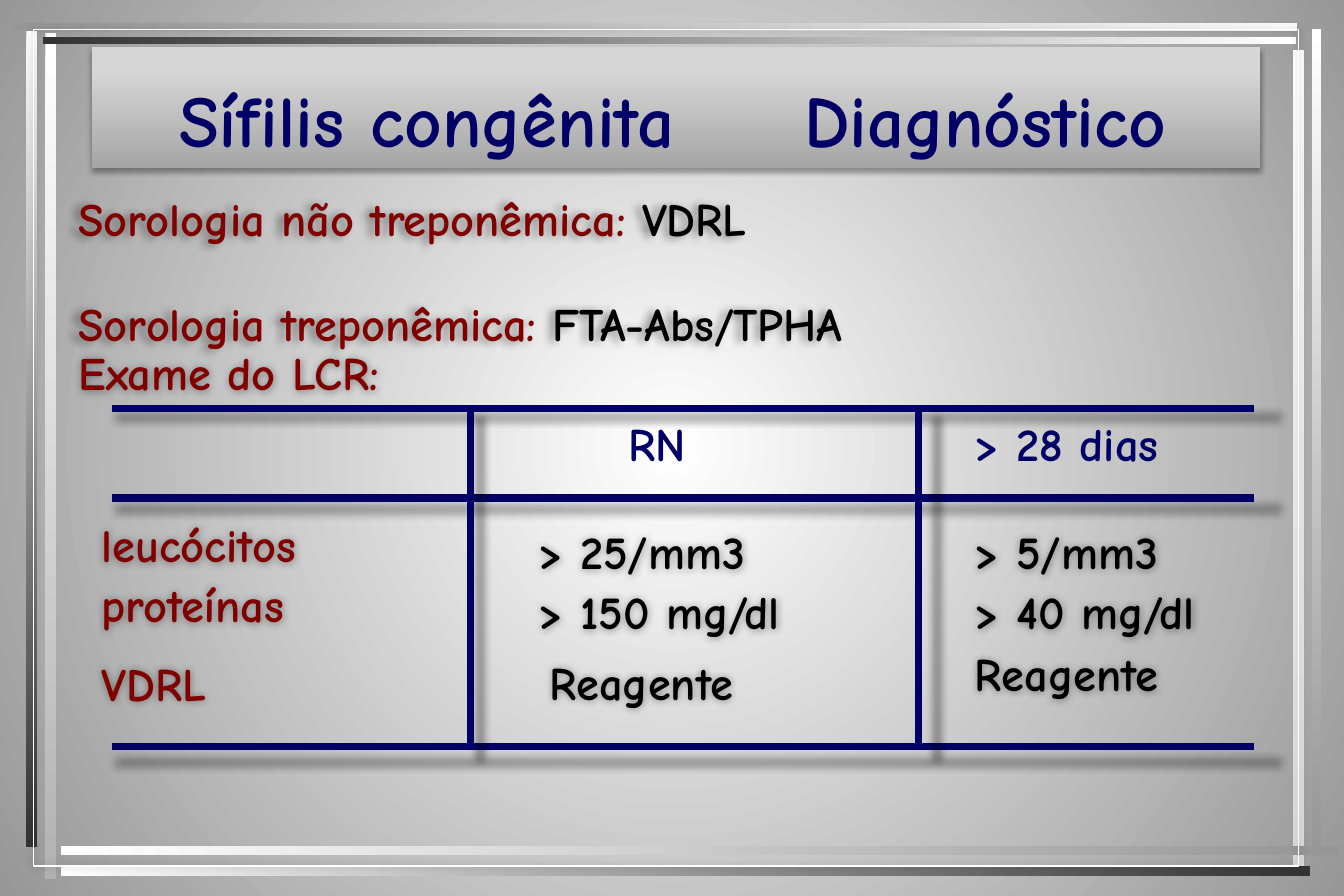
from dataclasses import dataclass
from typing import Optional

from lxml.etree import SubElement
from pptx import Presentation
from pptx.dml.color import RGBColor
from pptx.enum.shapes import MSO_CONNECTOR as Connector, MSO_SHAPE as Preset
from pptx.enum.text import MSO_ANCHOR as Anchor, MSO_AUTO_SIZE as AutoSize, PP_ALIGN as Align
from pptx.oxml.ns import qn
from pptx.util import Pt

PX = 9144  # EMU in one px, 100 px to the inch
FONT = "Comic Neue"
WHITE = RGBColor(0xFF, 0xFF, 0xFF)
PALE = RGBColor(0xDD, 0xDD, 0xDD)
SILVER = RGBColor(0xB2, 0xB2, 0xB2)
GREY = RGBColor(0x96, 0x96, 0x96)
EDGE = RGBColor(0x97, 0x97, 0x97)
CHARCOAL = RGBColor(0x33, 0x33, 0x33)
TITLE_DARK = RGBColor(0xA5, 0xA5, 0xA5)
TITLE_LIGHT = RGBColor(0xD6, 0xD6, 0xD6)
TITLE_TOP = RGBColor(0xD7, 0xD7, 0xD7)
NAVY = RGBColor(0x00, 0x00, 0x66)
MAROON = RGBColor(0x80, 0x00, 0x00)
BLACK = RGBColor(0x00, 0x00, 0x00)


@dataclass
class Shadow:
    blur: float
    distance: float = 0
    direction: int = 0
    alpha: int = 40
    scale: int = 100


@dataclass
class Bar:
    left: int
    top: int
    width: int
    height: int
    start: RGBColor
    end: RGBColor


@dataclass
class Label:
    left: int
    top: int
    width: int
    runs: list[tuple[str, RGBColor]]
    shadow: Optional[Shadow] = None


@dataclass
class Rule:
    x1: int
    y1: int
    x2: int
    y2: int


SOFT = Shadow(blur=5)
LEFTWARD = Shadow(blur=5, distance=4, direction=180)
RULE_SHADOW = Shadow(blur=5, scale=102)
TITLE_SHADOW = Shadow(blur=3.1, distance=1.8, direction=90, alpha=35)

BARS = [
    Bar(38, 28, 9, 708, WHITE, SILVER),
    Bar(22, 25, 9, 684, WHITE, CHARCOAL),
    Bar(1098, 24, 8, 693, WHITE, GREY),
    Bar(1082, 42, 10, 683, WHITE, PALE),
    Bar(51, 708, 1069, 8, WHITE, GREY),
    Bar(51, 725, 1046, 8, WHITE, CHARCOAL),
    Bar(36, 31, 1049, 6, CHARCOAL, WHITE),
    Bar(10, 19, 1076, 7, GREY, WHITE),
]

LABELS = [
    Label(56, 154, 1003, [("Sorologia não treponêmica: ", MAROON), ("VDRL", BLACK)], LEFTWARD),
    Label(56, 242, 1031, [("Sorologia treponêmica: ", MAROON), ("FTA-Abs/TPHA", BLACK)], LEFTWARD),
    Label(56, 283, 441, [("Exame do LCR:", MAROON)], SOFT),
    Label(516, 342, 159, [("RN", NAVY)]),
    Label(806, 342, 262, [("> 28 dias", NAVY)]),
    Label(75, 427, 281, [("leucócitos", MAROON)], SOFT),
    Label(441, 433, 272, [("> 25/mm3", BLACK)], SOFT),
    Label(806, 433, 234, [("> 5/mm3", BLACK)], SOFT),
    Label(75, 477, 272, [("proteínas", MAROON)], SOFT),
    Label(441, 483, 309, [("> 150 mg/dl", BLACK)], SOFT),
    Label(806, 483, 272, [("> 40 mg/dl", BLACK)], SOFT),
    Label(75, 543, 216, [("VDRL", MAROON)], SOFT),
    Label(450, 542, 262, [("Reagente", BLACK)], SOFT),
    Label(806, 535, 262, [("Reagente", BLACK)], SOFT),
]

RULES = [Rule(94, y, 1050, y) for y in (342, 417, 625)]
RULES += [Rule(x, 342, x, 625) for x in (394, 769)]


def box(left: int, top: int, width: int, height: int) -> tuple[int, ...]:
    return tuple(side * PX for side in (left, top, width, height))


def paint_gradient(fill, host, stops, angle: Optional[int]) -> None:
    """Linear gradient at an angle, or a circle from the centre if there is none."""
    fill.gradient()
    gradient = host.find(".//" + qn("a:gradFill"))
    for child in list(gradient):
        gradient.remove(child)
    stop_list = SubElement(gradient, qn("a:gsLst"))
    for position, color in stops:
        stop = SubElement(stop_list, qn("a:gs"), pos=str(position * 1000))
        SubElement(stop, qn("a:srgbClr"), val=str(color))
    if angle is None:
        circle = SubElement(gradient, qn("a:path"), path="circle")
        SubElement(circle, qn("a:fillToRect"), {side: "50000" for side in "ltrb"})
    else:
        SubElement(gradient, qn("a:lin"), ang=str(angle * 60000), scaled="0")


def cast_shadow(shape, shadow: Shadow) -> None:
    properties = shape._element.spPr
    for old in properties.findall(qn("a:effectLst")):
        properties.remove(old)
    effects = SubElement(properties, qn("a:effectLst"))
    outer = SubElement(effects, qn("a:outerShdw"), {
        "blurRad": str(int(Pt(shadow.blur))), "dist": str(int(Pt(shadow.distance))),
        "dir": str(shadow.direction * 60000), "sx": str(shadow.scale * 1000),
        "sy": str(shadow.scale * 1000), "algn": "ctr", "rotWithShape": "0"})
    color = SubElement(outer, qn("a:srgbClr"), val=str(BLACK))
    SubElement(color, qn("a:alpha"), val=str(shadow.alpha * 1000))


def set_font(paragraph, size: int) -> None:
    paragraph.font.name = FONT
    paragraph.font.size = Pt(size)
    paragraph.font.bold = True


def draw_bar(slide, bar: Bar) -> None:
    strip = slide.shapes.add_shape(
        Preset.RECTANGLE, *box(bar.left, bar.top, bar.width, bar.height))
    strip.shadow.inherit = False
    strip.line.fill.background()
    angle = 90 if bar.height > bar.width else 0
    paint_gradient(strip.fill, strip._element, [(0, bar.start), (100, bar.end)], angle)


def draw_frame(slide) -> None:
    frame = slide.shapes.add_shape(Preset.RECTANGLE, *box(28, 25, 1059, 700))
    frame.fill.background()
    frame.line.color.rgb = WHITE
    frame.line.width = Pt(0.75)
    cast_shadow(frame, SOFT)


def draw_label(slide, label: Label) -> None:
    holder = slide.shapes.add_textbox(*box(label.left, label.top, label.width, 57))
    text = holder.text_frame
    text.word_wrap = True
    text.auto_size = AutoSize.SHAPE_TO_FIT_TEXT
    text.vertical_anchor = Anchor.MIDDLE
    paragraph = text.paragraphs[0]
    set_font(paragraph, 28)
    for words, color in label.runs:
        run = paragraph.add_run()
        run.text = words
        run.font.color.rgb = color
    if label.shadow:
        cast_shadow(holder, label.shadow)


def draw_rule(slide, rule: Rule) -> None:
    line = slide.shapes.add_connector(
        Connector.STRAIGHT, *box(rule.x1, rule.y1, rule.x2, rule.y2))
    line.line.color.rgb = NAVY
    line.line.width = Pt(4.5)
    cast_shadow(line, RULE_SHADOW)


def draw_title(slide) -> None:
    title = slide.shapes.title
    title.left, title.top, title.width, title.height = box(77, 39, 978, 102)
    paint_gradient(title.fill, title._element,
                   [(0, TITLE_DARK), (80, TITLE_LIGHT), (100, TITLE_TOP)], 270)
    cast_shadow(title, TITLE_SHADOW)
    text = title.text_frame
    text.text = "Sífilis congênita\tDiagnóstico"
    text.auto_size = AutoSize.NONE
    text.vertical_anchor = Anchor.BOTTOM
    text.margin_left = 73 * PX
    paragraph = text.paragraphs[0]
    paragraph.alignment = Align.LEFT
    tabs = SubElement(paragraph._p.get_or_add_pPr(), qn("a:tabLst"))
    SubElement(tabs, qn("a:tab"), pos=str(523 * PX), algn="l")
    set_font(paragraph, 44)
    paragraph.font.color.rgb = NAVY


def main() -> None:
    deck = Presentation()
    deck.slide_width, deck.slide_height = 1125 * PX, 750 * PX
    slide = deck.slides.add_slide(deck.slide_layouts.get_by_name("Title Only"))
    paint_gradient(slide.background.fill, slide._element, [(0, WHITE), (100, EDGE)], None)

    # Border of shaded bars
    for bar in BARS:
        draw_bar(slide, bar)
    draw_frame(slide)

    # Title, tests and the ruled grid of findings
    draw_title(slide)
    for label in LABELS:
        draw_label(slide, label)
    for rule in RULES:
        draw_rule(slide, rule)
    deck.save("out.pptx")


if __name__ == "__main__":
    main()
